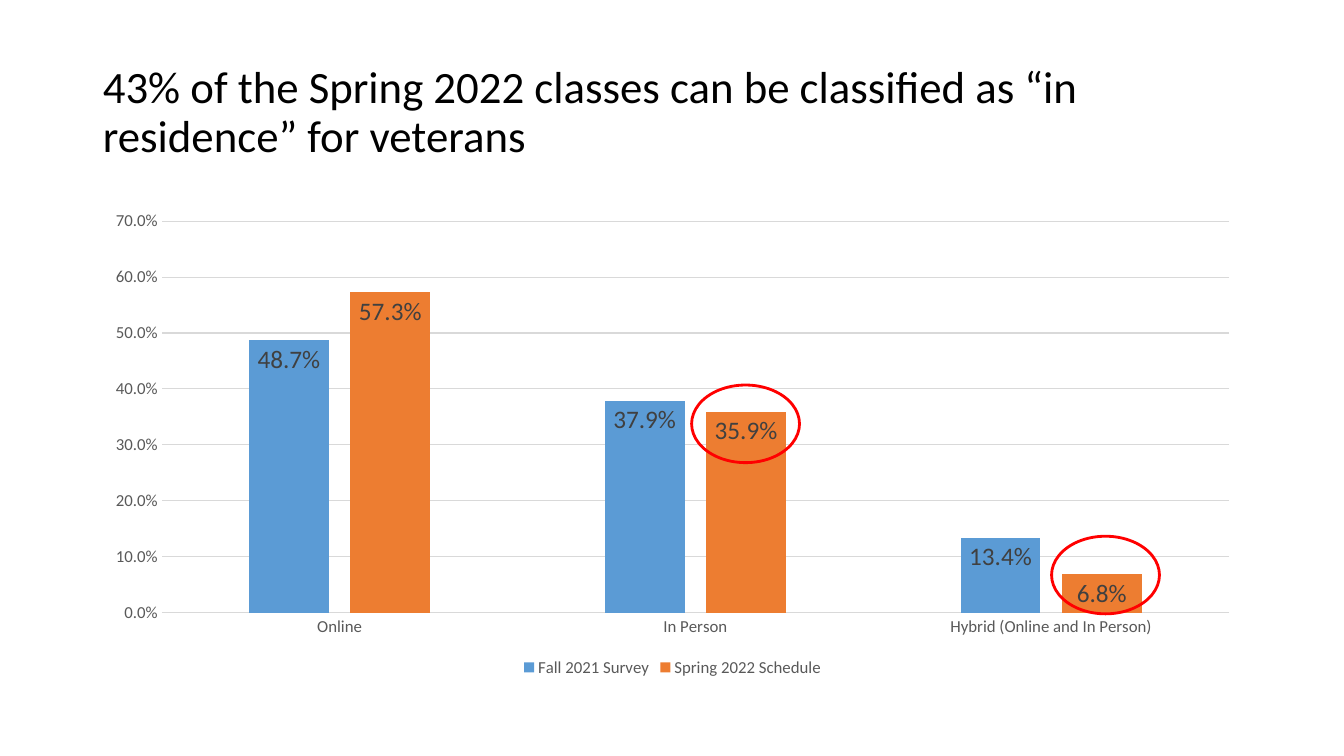
"""Build a slide comparing class formats, with the in-residence shares circled."""
from dataclasses import dataclass

from pptx import Presentation
from pptx import util as u
from pptx.chart import data as cd
from pptx.dml import color as dml
from pptx.enum import chart as ce
from pptx.enum import shapes, text

FACE = "Calibri"
GREY = "595959"
RULE = "D9D9D9"
PCT = "0.0%"
KINDS = ["Online", "In Person", "Hybrid (Online and In Person)"]


@dataclass
class Term:
    name: str
    vals: tuple[float, ...]
    hue: str


@dataclass
class Ring:
    left: float
    top: float
    width: float = 1.07
    height: float = 0.77


TERMS = [
    Term("Fall 2021 Survey", (0.487, 0.379, 0.134), "5B9BD5"),
    Term("Spring 2022 Schedule", (0.573, 0.359, 0.068), "ED7D31"),
]
RINGS = [Ring(6.86, 3.82), Ring(10.43, 5.32)]


def paint(item, hue: str) -> None:
    if hasattr(item, "solid"):
        item.solid()
        item = item.fore_color
    item.rgb = dml.RGBColor.from_string(hue)


def style(font, size: float, hue: str) -> None:
    font.name = FACE
    font.size = u.Pt(size)
    font.bold = False
    paint(font.color, hue)


def trace(line, hue: str, width: float) -> None:
    paint(line.fill, hue)
    line.width = u.Pt(width)


def place(shape, left: float, top: float, width: float, height: float) -> None:
    shape.left, shape.top = u.Inches(left), u.Inches(top)
    shape.width, shape.height = u.Inches(width), u.Inches(height)


def add_title(slide, words: str) -> None:
    title = slide.shapes.title
    place(title, 0.92, 0.4, 11.5, 1.45)
    frame = title.text_frame
    frame.text = words
    frame.word_wrap = True
    frame.auto_size = text.MSO_AUTO_SIZE.NONE
    frame.vertical_anchor = text.MSO_ANCHOR.MIDDLE
    para = frame.paragraphs[0]
    para.alignment = text.PP_ALIGN.LEFT
    para.line_spacing = 0.9
    style(para.font, 32, "000000")


def add_bars(slide, terms: list[Term]) -> None:
    data = cd.CategoryChartData(number_format=PCT)
    data.categories = KINDS
    for term in terms:
        data.add_series(term.name, term.vals)
    box = [u.Inches(n) for n in (0.92, 2, 11.5, 4.76)]
    chart = slide.shapes.add_chart(
        ce.XL_CHART_TYPE.COLUMN_CLUSTERED, *box, data).chart
    style(chart.font, 10, "000000")
    chart.has_title = False
    chart.has_legend = True
    chart.legend.position = ce.XL_LEGEND_POSITION.BOTTOM
    chart.legend.include_in_layout = False
    style(chart.legend.font, 12, GREY)

    cats, vals = chart.category_axis, chart.value_axis
    for axis in (cats, vals):
        axis.major_tick_mark = ce.XL_TICK_MARK.NONE
        axis.minor_tick_mark = ce.XL_TICK_MARK.NONE
        style(axis.tick_labels.font, 12, GREY)
    trace(cats.format.line, RULE, 0.75)
    vals.format.line.fill.background()
    vals.has_major_gridlines = True
    trace(vals.major_gridlines.format.line, RULE, 0.75)
    vals.minimum_scale, vals.maximum_scale, vals.major_unit = 0, 0.7, 0.1
    vals.tick_labels.number_format = PCT
    vals.tick_labels.number_format_is_linked = False

    plot = chart.plots[0]
    plot.vary_by_categories = False
    plot.gap_width, plot.overlap = 219, -27
    for term, bars in zip(terms, plot.series):
        paint(bars.format.fill, term.hue)
        tags = bars.data_labels
        tags.show_value = True
        tags.position = ce.XL_LABEL_POSITION.INSIDE_END
        tags.number_format = PCT
        tags.number_format_is_linked = False
        style(tags.font, 18, "404040")


def add_ring(slide, ring: Ring) -> None:
    box = [u.Inches(n) for n in (ring.left, ring.top, ring.width, ring.height)]
    oval = slide.shapes.add_shape(shapes.MSO_SHAPE.OVAL, *box)
    oval.shadow.inherit = False
    oval.fill.background()
    trace(oval.line, "FF0000", 2)


def main() -> None:
    deck = Presentation()
    deck.slide_width, deck.slide_height = u.Inches(13.33), u.Inches(7.5)
    slide = deck.slides.add_slide(deck.slide_layouts.get_by_name("Title Only"))
    paint(slide.background.fill, "FFFFFF")
    add_title(slide, "43% of the Spring 2022 classes can be classified as "
                     "“in residence” for veterans")
    add_bars(slide, TERMS)
    for ring in RINGS:
        add_ring(slide, ring)
    deck.save("out.pptx")


if __name__ == "__main__":
    main()
